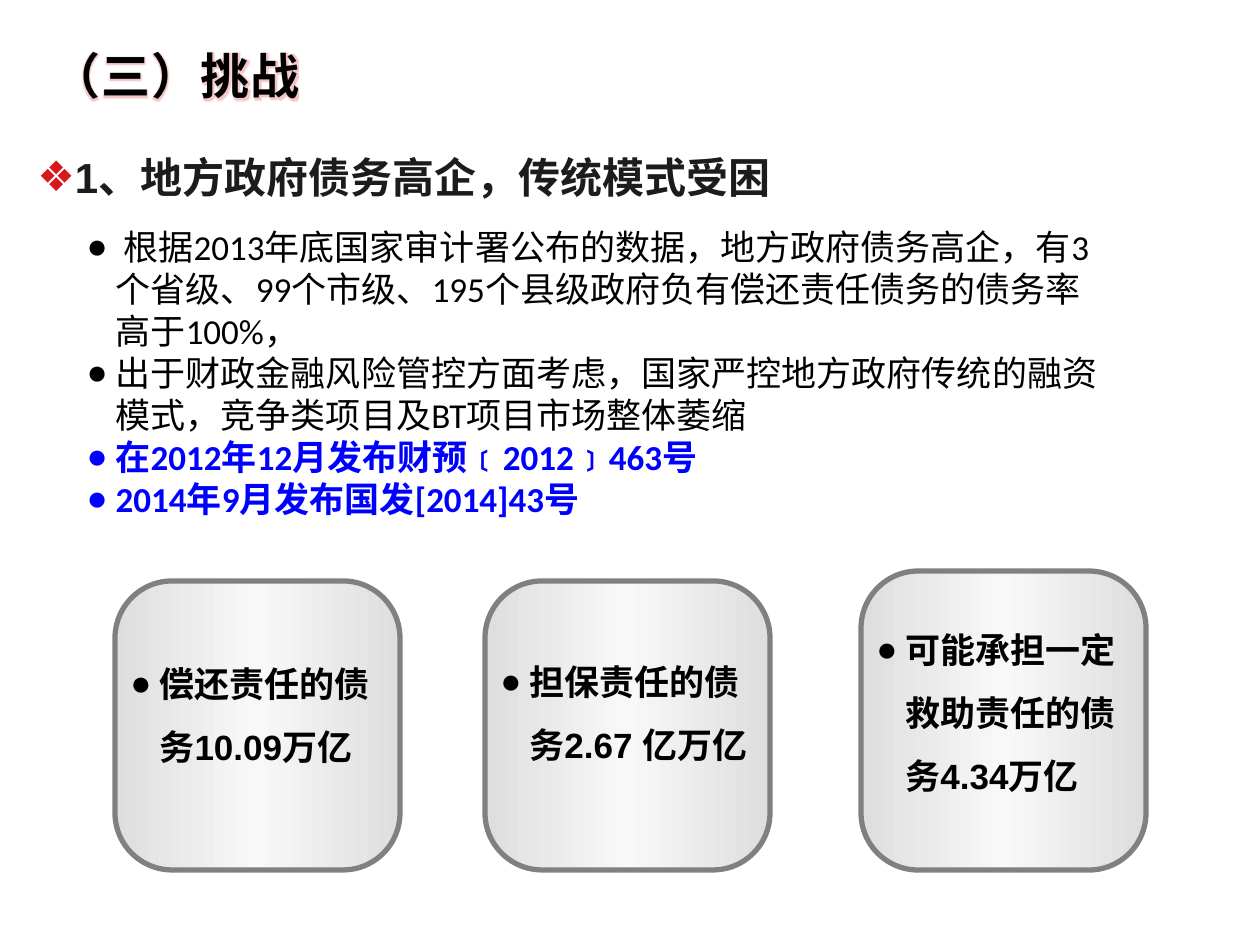
from lxml import etree
from pptx import Presentation
from pptx import util as u
from pptx.dml.color import RGBColor
from pptx.enum import shapes, text
from pptx.oxml import parse_xml
from pptx.oxml.ns import nsdecls, qn

BLACK = RGBColor(0x00, 0x00, 0x00)
INK = RGBColor(0x1C, 0x1C, 0x1C)
RED = RGBColor(0xD7, 0x18, 0x1F)
BLUE = RGBColor(0x00, 0x00, 0xFF)
BORDER = RGBColor(0x80, 0x80, 0x80)
SILVER = RGBColor(0xDE, 0xDE, 0xDE)
SHINE = RGBColor(0xF8, 0xF8, 0xF8)
CJK_FONT = "Noto Sans CJK SC"
PX = 914400 / 126


def px(*lengths):
    """Turn pixel lengths into EMU."""
    return [u.Emu(round(length * PX)) for length in lengths]


def write(paragraph, words, size, leading, font="Arial", color=BLACK, bold=True,
          bullet=None, bullet_color=None, hang=29):
    """Fill a paragraph; leading is the line height in points, hang is in px."""
    if bullet:
        props = paragraph._p.get_or_add_pPr()
        indent = px(hang)[0]
        props.set("marL", str(indent))
        props.set("indent", str(-indent))
        tint = etree.SubElement(props, qn("a:buClr"))
        etree.SubElement(tint, qn("a:srgbClr"), val=str(bullet_color or color))
        etree.SubElement(props, qn("a:buFont"), typeface="Arial")
        etree.SubElement(props, qn("a:buChar"), char=bullet)
    paragraph.alignment = text.PP_ALIGN.LEFT
    paragraph.line_spacing = u.Pt(leading)
    paragraph.space_before = u.Pt(0)
    run = paragraph.add_run()
    run.text = words
    run.font.size = u.Pt(size)
    run.font.bold = bold
    run.font.color.rgb = color
    run.font.name = font
    latin = run._r.rPr.find(qn("a:latin"))
    latin.addnext(parse_xml(f'<a:ea {nsdecls("a")} typeface="{CJK_FONT}"/>'))
    return run


prs = Presentation()
prs.slide_width, prs.slide_height = px(1260, 945)
slide = prs.slides.add_slide(prs.slide_layouts[1])

# Title with a soft red glow
title = slide.shapes.title
title.left, title.top, title.width, title.height = px(39, 39, 680, 72)
title.text_frame.auto_size = text.MSO_AUTO_SIZE.NONE
title.text_frame.vertical_anchor = text.MSO_ANCHOR.TOP
title_run = write(title.text_frame.paragraphs[0], "（三）挑战", 28, 34, font=CJK_FONT)
title_run._r.rPr.set("spc", "50")
title_run._r.rPr.find(qn("a:solidFill")).addnext(parse_xml(
    f'<a:effectLst {nsdecls("a")}><a:glow rad="38100"><a:srgbClr val="{RED}">'
    '<a:alpha val="25000"/></a:srgbClr></a:glow></a:effectLst>'))

# Section heading
heading = slide.shapes.add_textbox(*px(25, 145, 893, 63)).text_frame
heading.word_wrap = True
write(heading.paragraphs[0], "1、地方政府债务高企，传统模式受困", 24, 29, color=INK,
      bullet="❖", bullet_color=RED, hang=37)

# Findings and policy documents
points = [
    (" 根据2013年底国家审计署公布的数据，地方政府债务高企，有3个省级、99个市级、"
     "195个县级政府负有偿还责任债务的债务率高于100%，", BLACK, False),
    ("出于财政金融风险管控方面考虑，国家严控地方政府传统的融资模式，"
     "竞争类项目及BT项目市场整体萎缩", BLACK, False),
    ("在2012年12月发布财预﹝2012﹞463号", BLUE, True),
    ("2014年9月发布国发[2014]43号", BLUE, True),
]
body = slide.placeholders[1]
body.left, body.top, body.width, body.height = px(74, 224, 1052, 297)
findings = body.text_frame
findings.auto_size = text.MSO_AUTO_SIZE.NONE
findings.vertical_anchor = text.MSO_ANCHOR.MIDDLE
for i, (words, color, bold) in enumerate(points):
    paragraph = findings.add_paragraph() if i else findings.paragraphs[0]
    write(paragraph, words, 20, 24, font="Calibri", color=color, bold=bold, bullet="●")

# Debt cards: frame left, top, width (before the quarter turn), label left, top, height
debts = [
    ("偿还责任的债务10.09万亿", 113, 583, 289, 118, 635, 140),
    ("担保责任的债务2.67 亿万亿", 483, 583, 289, 488, 633, 140),
    ("可能承担一定救助责任的债务4.34万亿", 854, 578, 299, 864, 601, 204),
]
stops = "".join(
    f'<a:gs pos="{position}"><a:srgbClr val="{color}"/></a:gs>'
    for position, color in ((0, SILVER), (50000, SHINE), (100000, SILVER)))
for words, left, top, width, label_left, label_top, label_height in debts:
    card = slide.shapes.add_shape(shapes.MSO_SHAPE.ROUNDED_RECTANGLE,
                                  *px(left, top, width, 285))
    card.rotation = 90
    card.adjustments[0] = 0.2
    card.shadow.inherit = False
    card.line.color.rgb = BORDER
    card.line.width = u.Pt(3)
    card._element.spPr.find(qn("a:prstGeom")).addnext(parse_xml(
        f'<a:gradFill {nsdecls("a")} rotWithShape="1"><a:gsLst>{stops}</a:gsLst>'
        '<a:lin ang="5400000" scaled="1"/></a:gradFill>'))

    label = slide.shapes.add_textbox(*px(label_left, label_top, 282, label_height)).text_frame
    label.word_wrap = True
    write(label.paragraphs[0], words, 20, 36, bullet="●")

prs.save("out.pptx")
